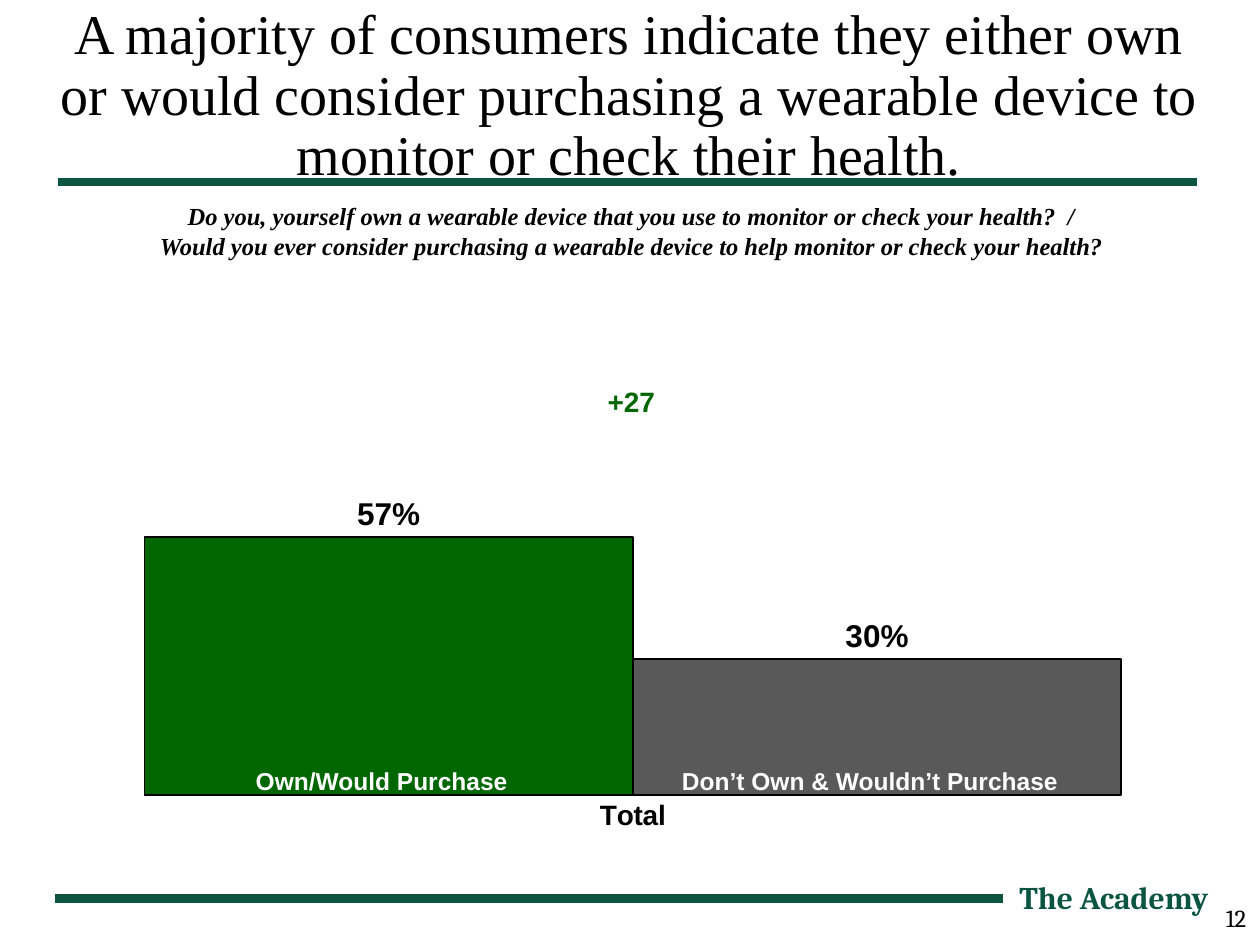
from lxml import etree
from pptx import Presentation
from pptx.chart.data import CategoryChartData
from pptx.dml.color import RGBColor
from pptx.enum.chart import XL_CHART_TYPE, XL_LABEL_POSITION, XL_TICK_LABEL_POSITION, XL_TICK_MARK
from pptx.enum.shapes import MSO_CONNECTOR
from pptx.enum.text import MSO_ANCHOR, PP_ALIGN
from pptx.oxml import parse_xml
from pptx.oxml.ns import nsdecls, qn
from pptx.util import Pt

BLACK = RGBColor(0x00, 0x00, 0x00)
WHITE = RGBColor(0xFF, 0xFF, 0xFF)
ACADEMY_GREEN = RGBColor(0x0A, 0x55, 0x40)
BAR_GREEN = RGBColor(0x00, 0x66, 0x00)
BAR_GRAY = RGBColor(0x59, 0x59, 0x59)

# Content
TITLE = ("A majority of consumers indicate they either own or would consider "
         "purchasing a wearable device to monitor or check their health.")
QUESTIONS = [
    "Do you, yourself own a wearable device that you use to monitor or check your health?  /",
    "Would you ever consider purchasing a wearable device to help monitor or check your health?",
]
CATEGORY = "Total"
ANSWERS = [
    ("Own/Would Purchase", 0.57, BAR_GREEN),
    ("Don’t Own & Wouldn’t Purchase", 0.30, BAR_GRAY),
]
DIFFERENCE = "+27"
ORGANIZATION = "The Academy"
PAGE_NUMBER = "12"

# Chart frame in points, plot area and bar gap as fractions
CHART_LEFT, CHART_TOP, CHART_WIDTH, CHART_HEIGHT = 2, 113, 720, 397.5
PLOT = {"x": 0.015, "y": 0.176, "w": 0.969, "h": 0.683}
GAP = 0.5

presentation = Presentation()
presentation.slide_width, presentation.slide_height = Pt(720), Pt(540)
slide = presentation.slides.add_slide(presentation.slide_layouts[6])
slide.background.fill.solid()
slide.background.fill.fore_color.rgb = WHITE


def add_text(lines, left, top, width, height, size, font_name, color, bold=False,
             italic=False, align=PP_ALIGN.CENTER, anchor=MSO_ANCHOR.TOP, spacing=None):
    frame = slide.shapes.add_textbox(Pt(left), Pt(top), Pt(width), Pt(height)).text_frame
    frame.word_wrap = True
    frame.vertical_anchor = anchor
    frame.text = "\n".join(lines)
    for paragraph in frame.paragraphs:
        paragraph.alignment = align
        paragraph.line_spacing = spacing
        for run in paragraph.runs:
            font = run.font
            font.name, font.size, font.bold, font.italic = font_name, Pt(size), bold, italic
            font.color.rgb = color


def add_rule(left, right, y, weight):
    rule = slide.shapes.add_connector(MSO_CONNECTOR.STRAIGHT, Pt(left), Pt(y), Pt(right), Pt(y))
    rule.line.color.rgb = ACADEMY_GREEN
    rule.line.width = Pt(weight)
    etree.SubElement(rule._element.spPr, qn("a:effectLst"))


# Footer
add_text([PAGE_NUMBER], 647.3, 512.6, 72, 24.5, 14, "Cambria", BLACK, align=PP_ALIGN.RIGHT)
add_rule(31.7, 573, 513.4, 5)
add_text([ORGANIZATION], 566.6, 498.2, 131, 29, 18, "Cambria", ACADEMY_GREEN,
         bold=True, align=PP_ALIGN.RIGHT)

# Column chart
chart_data = CategoryChartData(number_format="0%")
chart_data.categories = [CATEGORY]
for answer, share, _ in ANSWERS:
    chart_data.add_series(answer, [share])
chart = slide.shapes.add_chart(
    XL_CHART_TYPE.COLUMN_CLUSTERED, Pt(CHART_LEFT), Pt(CHART_TOP),
    Pt(CHART_WIDTH), Pt(CHART_HEIGHT), chart_data).chart
chart.has_legend = False
chart.has_title = False
chart.font.name, chart.font.size = "Arial", Pt(18)
chart.font.color.rgb = BLACK

columns = chart.plots[0]
columns.gap_width = int(GAP * 100)
columns.overlap = 0
columns.vary_by_categories = False
for series, (_, _, color) in zip(columns.series, ANSWERS):
    series.format.fill.solid()
    series.format.fill.fore_color.rgb = color
    series.format.line.color.rgb = BLACK
    series.format.line.width = Pt(1)
    labels = series.data_labels
    labels.show_value = True
    labels.number_format, labels.number_format_is_linked = "0%", False
    labels.position = XL_LABEL_POSITION.OUTSIDE_END
    labels.font.name, labels.font.size, labels.font.bold = "Arial", Pt(18), True
    labels.font.color.rgb = BLACK

for axis in (chart.category_axis, chart.value_axis):
    axis.major_tick_mark = axis.minor_tick_mark = XL_TICK_MARK.NONE
    axis.has_major_gridlines = False
    axis.format.line.fill.background()
category_font = chart.category_axis.tick_labels.font
category_font.name, category_font.size, category_font.bold = "Arial", Pt(16), True
category_font.color.rgb = BLACK
shares = chart.value_axis
shares.minimum_scale, shares.maximum_scale, shares.major_unit = 0, 1.05, 0.1
shares.tick_label_position = XL_TICK_LABEL_POSITION.NONE

# Fixed inner plot area
plot_area = chart._chartSpace.chart.plotArea
for layout in plot_area.findall(qn("c:layout")):
    plot_area.remove(layout)
modes = "".join(f'<c:{side}Mode val="edge"/>' for side in "xy")
extents = "".join(f'<c:{key} val="{value}"/>' for key, value in PLOT.items())
plot_area.insert(0, parse_xml(
    f'<c:layout {nsdecls("c")}><c:manualLayout><c:layoutTarget val="inner"/>'
    f'{modes}{extents}</c:manualLayout></c:layout>'))

# Title and question
add_text([TITLE], 20.9, 0, 677.5, 40.3, 32, "Times New Roman", BLACK, spacing=0.9)
add_rule(33.1, 684, 103.9, 4.5)
add_text(QUESTIONS, 36.7, 111.6, 648.7, 41, 14, "Times New Roman", BLACK,
         bold=True, italic=True)

# Answer names at the foot of the columns
plot_width = CHART_WIDTH * PLOT["w"]
column_width = plot_width / (len(ANSWERS) + GAP)
first_column = CHART_LEFT + CHART_WIDTH * PLOT["x"] + column_width * GAP / 2
baseline = CHART_TOP + CHART_HEIGHT * (PLOT["y"] + PLOT["h"])
NAME_HEIGHT, NAME_DROP, NAME_SHIFT = 22.3, 4, -4
for index, (answer, _, _) in enumerate(ANSWERS):
    add_text([answer], first_column + index * column_width + NAME_SHIFT,
             baseline + NAME_DROP - NAME_HEIGHT, column_width, NAME_HEIGHT,
             14, "Arial", WHITE, bold=True, anchor=MSO_ANCHOR.BOTTOM, spacing=0.9)

add_text([DIFFERENCE], 312.5, 216, 96.5, 26.6, 16, "Arial", BAR_GREEN, bold=True)

presentation.save("out.pptx")
